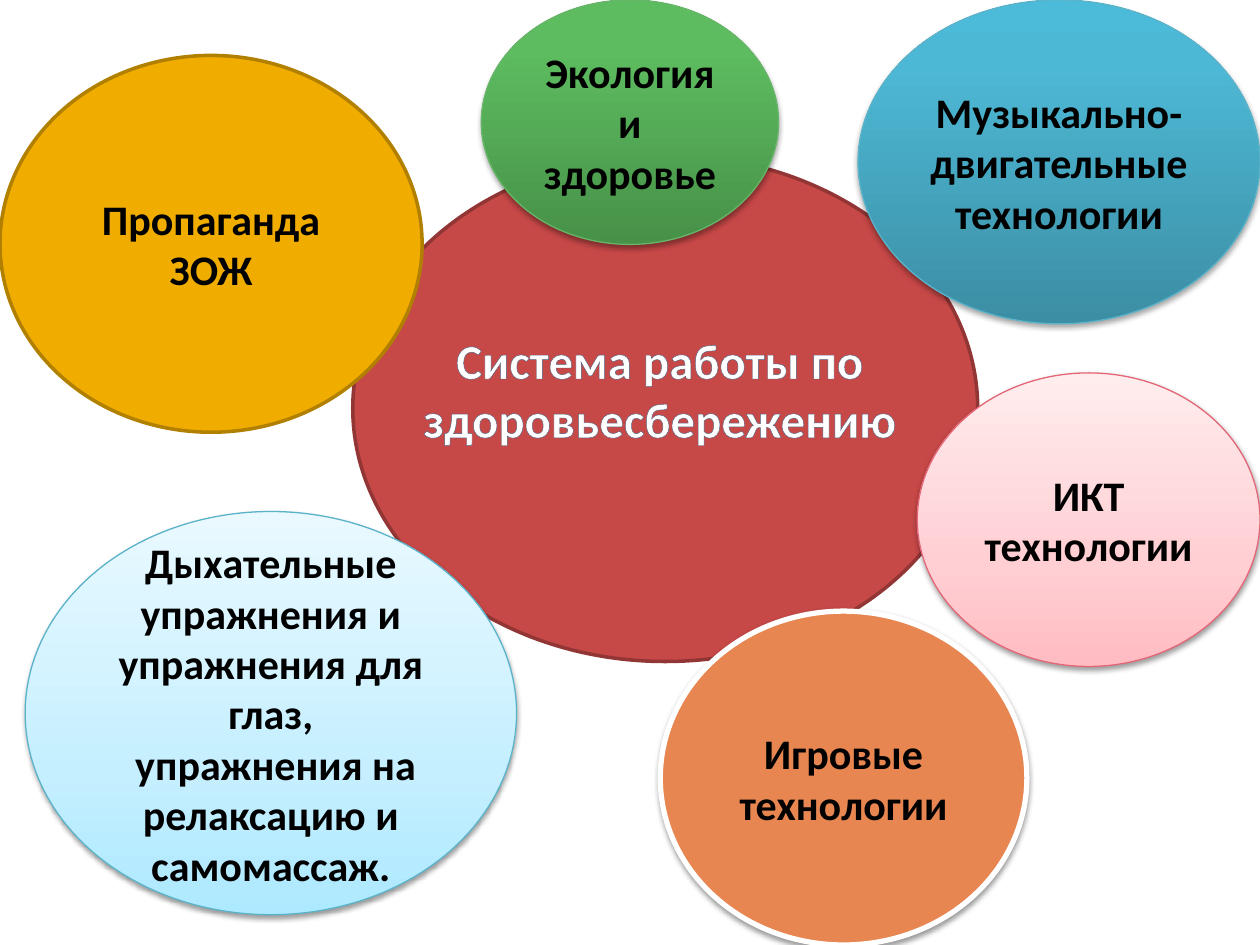
"""Builds a slide of overlapping ellipses around a central theme of health work."""
import pptx
import pptx.dml.color
import pptx.enum.shapes
import pptx.enum.text
import pptx.oxml
import pptx.oxml.ns
import pptx.util

COLUMNS, ROWS = 100, 75
WIDTH, HEIGHT = pptx.util.Inches(10), pptx.util.Inches(7.5)

COLORS = {
    "red": "C64847", "red edge": "923535",
    "orange": "E88651", "white": "FFFFFF",
    "gold": "F0AD00", "gold edge": "B28000",
    "pink edge": "E46778", "blue edge": "5BB3CA", "green edge": "67B569",
    "title edge": "526080", "black": "000000",
}
GRADIENTS = {
    "pink": [(0, "FFBCC2"), (35, "FFCFD3"), (100, "FFEDEE")],
    "blue": [(0, "3C8EA4"), (80, "4DB8D5"), (100, "4BBBD9")],
    "sky": [(0, "ADE9FF"), (35, "C5EFFF"), (100, "E9F9FF")],
    "green": [(0, "479149"), (80, "5DBC5F"), (100, "5BBF5E")],
}
SHADOWS = {
    "soft": {"alpha": 38, "blur": 3.1, "distance": 1.6},
    "deep": {"alpha": 35, "blur": 3.1, "distance": 1.8},
}
TOPICS = [
    ([], (28, 12.3, 49.6, 40.2), "red", "red edge", 2, None),
    (["ИКТ технологии"], (72.8, 29.6, 27.2, 23.3), "pink", "pink edge", 0.75, "soft"),
    (["Музыкально-двигательные технологии"], (68.1, 0, 31.9, 25.7), "blue", "blue edge", 0.75, "deep"),
    (["Игровые технологии"], (52.4, 48.5, 29.1, 26.5), "orange", "white", 3, "soft"),
    (["Пропаганда ЗОЖ"], (0, 4.4, 33.5, 29.9), "gold", "gold edge", 2, None),
    (["Дыхательные упражнения и упражнения для глаз,",
      " упражнения на релаксацию и самомассаж."], (2, 40.6, 39, 32), "sky", "blue edge", 0.75, "soft"),
    (["Экология и здоровье"], (38.2, 0, 23.6, 19.4), "green", "green edge", 0.75, "deep"),
]
THEME = ["Система работы по здоровьесбережению"]
THEME_PLACE = (31.9, 25.7, 40.9, 10.4)

TOPIC_FONT = {"name": "Calibri", "size": pptx.util.Pt(24), "bold": True}
THEME_FONT = {**TOPIC_FONT, "size": pptx.util.Pt(28)}
TOPIC_FRAME = {"word_wrap": True, "vertical_anchor": pptx.enum.text.MSO_ANCHOR.MIDDLE}
THEME_FRAME = {
    "word_wrap": True,
    "vertical_anchor": pptx.enum.text.MSO_ANCHOR.TOP,
    "auto_size": pptx.enum.text.MSO_AUTO_SIZE.SHAPE_TO_FIT_TEXT,
}


def rgb(color):
    return pptx.dml.color.RGBColor.from_string(COLORS[color])


def apply(target, values):
    for attribute, value in values.items():
        setattr(target, attribute, value)


def drawing(tag, content):
    return pptx.oxml.parse_xml(f'<a:{tag} {pptx.oxml.ns.nsdecls("a")}>{content}</a:{tag}>')


def place(cells):
    left, top, width, height = cells
    column, row = WIDTH / COLUMNS, HEIGHT / ROWS
    return [round(length) for length in (left * column, top * row, width * column, height * row)]


def paint(shape, fill):
    if fill in COLORS:
        shape.fill.solid()
        shape.fill.fore_color.rgb = rgb(fill)
        return
    shape.fill.gradient()
    shape.fill.gradient_angle = 90
    stops = "".join(
        f'<a:gs pos="{share * 1000}"><a:srgbClr val="{color}"/></a:gs>'
        for share, color in GRADIENTS[fill]
    )
    old_stops = next(shape.element.spPr.iter(pptx.oxml.ns.qn("a:gsLst")))
    old_stops.getparent().replace(old_stops, drawing("gsLst", stops))


def cast_shadow(shape, shadow):
    shape.shadow.inherit = False
    if shadow:
        values = SHADOWS[shadow]
        effects = shape.element.spPr.find(pptx.oxml.ns.qn("a:effectLst"))
        outer = drawing("outerShdw", f'<a:srgbClr val="{COLORS["black"]}">'
                        f'<a:alpha val="{values["alpha"] * 1000}"/></a:srgbClr>')
        for attribute, value in {
            "blurRad": pptx.util.Pt(values["blur"]),
            "dist": pptx.util.Pt(values["distance"]),
            "dir": 90 * 60000,
            "rotWithShape": 0,
        }.items():
            outer.set(attribute, str(value))
        effects.append(outer)


def write(frame, lines, frame_values, font_values, color):
    apply(frame, frame_values)
    for index, line in enumerate(lines):
        paragraph = frame.add_paragraph() if index else frame.paragraphs[0]
        paragraph.alignment = pptx.enum.text.PP_ALIGN.CENTER
        run = paragraph.add_run()
        run.text = line
        apply(run.font, font_values)
        run.font.color.rgb = rgb(color)


def add_topic(slide, lines, cells, fill, edge, edge_width, shadow):
    ellipse = slide.shapes.add_shape(pptx.enum.shapes.MSO_SHAPE.OVAL, *place(cells))
    paint(ellipse, fill)
    ellipse.line.color.rgb = rgb(edge)
    ellipse.line.width = pptx.util.Pt(edge_width)
    cast_shadow(ellipse, shadow)
    write(ellipse.text_frame, lines, TOPIC_FRAME, TOPIC_FONT, "black")


def add_theme(slide):
    theme = slide.shapes.add_textbox(*place(THEME_PLACE))
    write(theme.text_frame, THEME, THEME_FRAME, THEME_FONT, "white")
    outline = drawing("ln", f'<a:solidFill><a:srgbClr val="{COLORS["title edge"]}"/></a:solidFill>')
    outline.set("w", str(pptx.util.Pt(1)))
    theme.text_frame.paragraphs[0].runs[0].font.fill
    next(theme.element.iter(pptx.oxml.ns.qn("a:rPr"))).insert(0, outline)


def main():
    deck = pptx.Presentation()
    apply(deck, {"slide_width": WIDTH, "slide_height": HEIGHT})
    slide = deck.slides.add_slide(deck.slide_layouts[6])
    for topic in TOPICS:
        add_topic(slide, *topic)
    add_theme(slide)
    deck.save("out.pptx")


if __name__ == "__main__":
    main()
